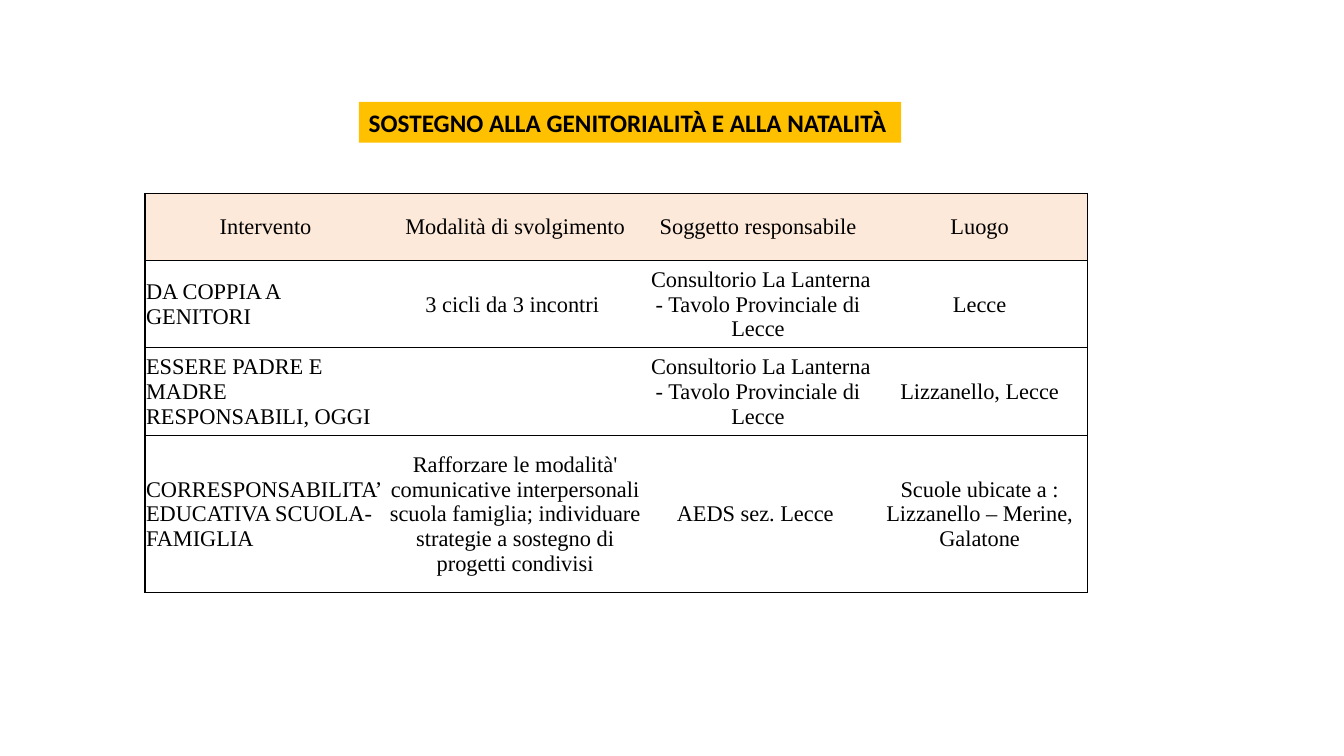
from dataclasses import dataclass

from lxml import etree
from pptx import Presentation
from pptx.dml.color import RGBColor
from pptx.enum.shapes import MSO_SHAPE
from pptx.enum.text import MSO_ANCHOR, MSO_AUTO_SIZE, PP_ALIGN
from pptx.oxml.ns import qn
from pptx.util import Pt

RECTANGLE = MSO_SHAPE.RECTANGLE
LEFT, CENTER = PP_ALIGN.LEFT, PP_ALIGN.CENTER
MIDDLE = MSO_ANCHOR.MIDDLE
FIT_SHAPE = MSO_AUTO_SIZE.SHAPE_TO_FIT_TEXT


@dataclass(frozen=True)
class Theme:
    ink: str = "000000"
    banner: str = "FFC000"
    header: str = "FDE9D9"
    title_font: str = "Calibri"
    table_font: str = "Times New Roman"
    title_size: float = 18
    table_size: float = 16
    outer_line: float = 1
    inner_line: float = 0.5
    cell_margin: float = 0.75


CONSULTORIO = " Consultorio La Lanterna - Tavolo Provinciale di Lecce"
INTERVENTI = [
    ["Intervento", "Modalità di svolgimento", "Soggetto responsabile", "Luogo"],
    ["DA COPPIA A GENITORI", "3 cicli da 3 incontri ", CONSULTORIO, "Lecce"],
    ["ESSERE PADRE E MADRE RESPONSABILI, OGGI", "", CONSULTORIO, "Lizzanello, Lecce"],
    ["CORRESPONSABILITA’ EDUCATIVA SCUOLA-FAMIGLIA",
     "Rafforzare le modalità' comunicative interpersonali scuola famiglia; "
     "individuare strategie a sostegno di progetti condivisi",
     "AEDS sez. Lecce ", "Scuole ubicate a : Lizzanello – Merine, Galatone"],
]
COLUMN_WIDTHS = [172.2, 184.4, 162.6, 154]
ROW_HEIGHTS = [47.6, 62.6, 62.6, 112.2]


class SlideBuilder:
    def __init__(self, slide, theme):
        self.slide = slide
        self.theme = theme

    def format_text(self, frame, font_name, size, align, bold=False):
        for paragraph in frame.paragraphs:
            paragraph.alignment = align
            for styled in (paragraph, *paragraph.runs):
                font = styled.font
                font.name, font.size, font.bold = font_name, Pt(size), bold
                font.color.rgb = RGBColor.from_string(self.theme.ink)

    def banner(self, text, left, top, width, height):
        banner = self.slide.shapes.add_shape(
            RECTANGLE, Pt(left), Pt(top), Pt(width), Pt(height))
        banner.shadow.inherit = False
        banner.fill.solid()
        banner.fill.fore_color.rgb = RGBColor.from_string(self.theme.banner)
        banner.line.fill.background()
        frame = banner.text_frame
        frame.text = text
        frame.word_wrap = True
        frame.auto_size = FIT_SHAPE
        self.format_text(frame, self.theme.title_font, self.theme.title_size, LEFT, True)

    def border(self, cell, side, width):
        """Draw one side (L, R, T or B) of a cell; width 0 hides it."""
        line = etree.SubElement(cell._tc.get_or_add_tcPr(), qn(f"a:ln{side}"),
                                w=str(Pt(width)))
        if width:
            fill = etree.SubElement(line, qn("a:solidFill"))
            etree.SubElement(fill, qn("a:srgbClr"), val=self.theme.ink)
        else:
            etree.SubElement(line, qn("a:noFill"))

    def table(self, rows, left, top, widths, heights):
        theme = self.theme
        table = self.slide.shapes.add_table(
            len(rows), len(widths), Pt(left), Pt(top),
            Pt(sum(widths)), Pt(sum(heights))).table
        table.first_row = table.horz_banding = False
        for column, width in zip(table.columns, widths):
            column.width = Pt(width)
        for row, height in zip(table.rows, heights):
            row.height = Pt(height)
        last_row, last_column = len(rows) - 1, len(widths) - 1
        for r, texts in enumerate(rows):
            for c, text in enumerate(texts):
                cell = table.cell(r, c)
                cell.text_frame.text = text
                cell.vertical_anchor = MIDDLE
                cell.margin_left = cell.margin_right = Pt(theme.cell_margin)
                cell.margin_top, cell.margin_bottom = Pt(theme.cell_margin), 0
                align = LEFT if r and c == 0 else CENTER
                self.format_text(cell.text_frame, theme.table_font, theme.table_size, align)
                self.border(cell, "L", 0 if c else theme.outer_line)
                self.border(cell, "R", theme.outer_line if c == last_column else 0)
                self.border(cell, "T", theme.inner_line if r else theme.outer_line)
                self.border(cell, "B", theme.outer_line if r == last_row else theme.inner_line)
                if r == 0:
                    cell.fill.solid()
                    cell.fill.fore_color.rgb = RGBColor.from_string(theme.header)
                else:
                    cell.fill.background()


def main():
    presentation = Presentation()
    presentation.slide_width, presentation.slide_height = Pt(960), Pt(540)
    blank_layout = presentation.slide_layouts[6]
    builder = SlideBuilder(presentation.slides.add_slide(blank_layout), Theme())
    builder.table(INTERVENTI, 103.6, 138.2, COLUMN_WIDTHS, ROW_HEIGHTS)
    builder.banner("SOSTEGNO ALLA GENITORIALITÀ E ALLA NATALITÀ", 256.3, 72.8, 387.4, 29.1)
    presentation.save("out.pptx")


if __name__ == "__main__":
    main()
